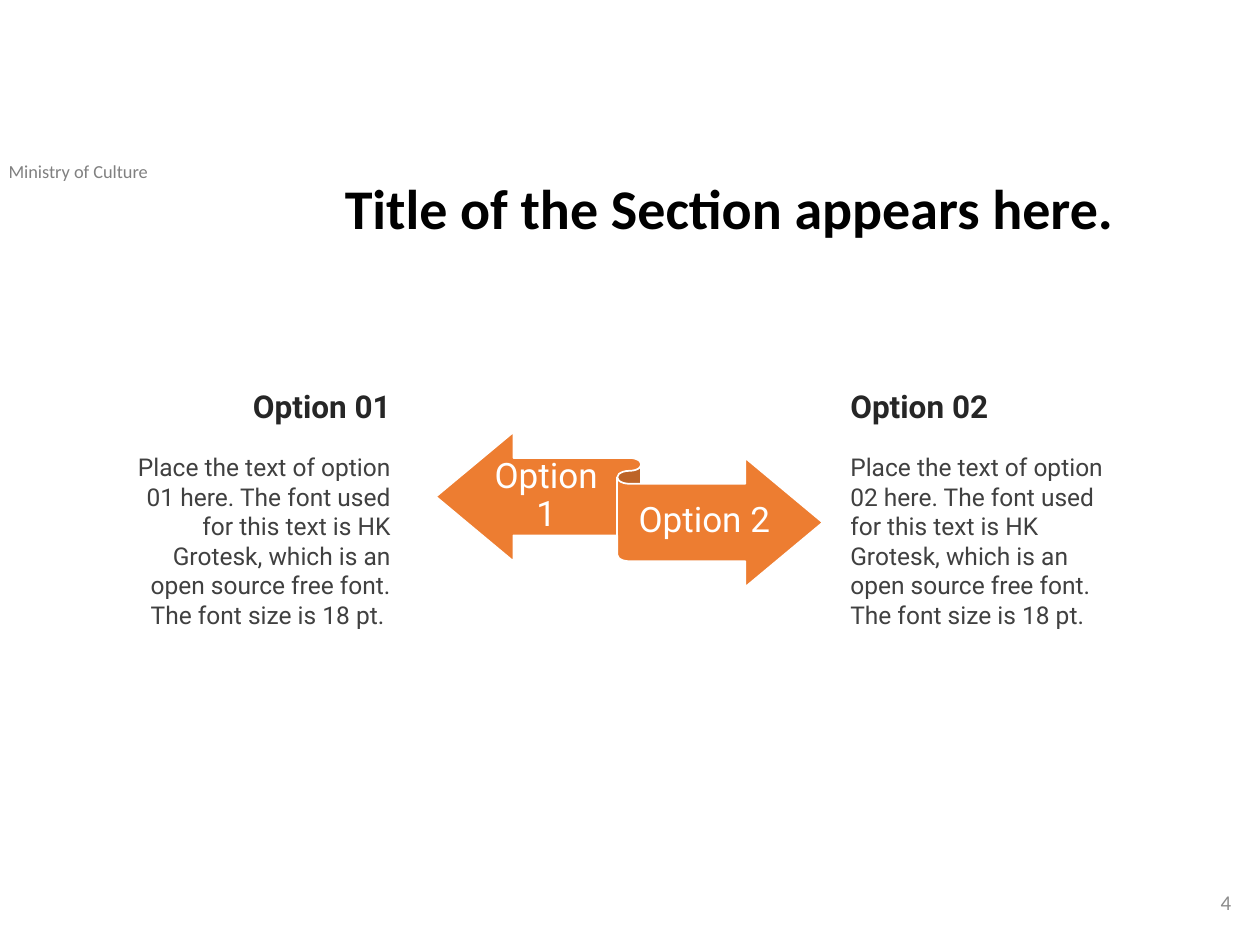
import pptx
import pptx.util
import pptx.dml.color
import pptx.enum.shapes
import pptx.enum.text

Inches = pptx.util.Inches
Pt = pptx.util.Pt
RGBColor = pptx.dml.color.RGBColor
ALIGN = pptx.enum.text.PP_ALIGN
ANCHOR = pptx.enum.text.MSO_ANCHOR

ORANGE = RGBColor(0xED, 0x7D, 0x31)
WHITE = RGBColor(0xFF, 0xFF, 0xFF)
BLACK = RGBColor(0x00, 0x00, 0x00)
HEADING = RGBColor(0x26, 0x26, 0x26)
BODY = RGBColor(0x40, 0x40, 0x40)
HEADER_GRAY = RGBColor(0x80, 0x80, 0x80)
NUMBER_GRAY = RGBColor(0x8C, 0x8C, 0x8C)


def add_frame(slide, left, top, width, height, anchor=ANCHOR.TOP):
    box = slide.shapes.add_textbox(
        Inches(left), Inches(top), Inches(width), Inches(height))
    frame = box.text_frame
    frame.word_wrap = True
    frame.vertical_anchor = anchor
    return frame


def style(paragraph, text, font, size, color, align=ALIGN.LEFT, bold=False):
    paragraph.text = text
    paragraph.alignment = align
    paragraph.font.name = font
    paragraph.font.size = Pt(size)
    paragraph.font.color.rgb = color
    paragraph.font.bold = bold


def add_ribbon(slide):
    ribbon = slide.shapes.add_shape(
        pptx.enum.shapes.MSO_SHAPE.LEFT_RIGHT_RIBBON,
        Inches(3.46), Inches(3.43), Inches(3.07), Inches(1.23))
    ribbon.shadow.inherit = False
    ribbon.fill.solid()
    ribbon.fill.fore_color.rgb = ORANGE
    ribbon.line.color.rgb = WHITE
    ribbon.line.width = Pt(1)


def add_ribbon_label(slide, text, left, top, width):
    frame = add_frame(slide, left, top, width, 0.6, ANCHOR.MIDDLE)
    frame.margin_left = frame.margin_right = 0
    frame.margin_top = frame.margin_bottom = Inches(0.08)
    label = frame.paragraphs[0]
    style(label, text, "Roboto", 20, WHITE, ALIGN.CENTER)
    label.line_spacing = 0.9


def add_option(slide, number, left, width, align, ending):
    frame = add_frame(slide, left, 3.02, width, 2.27)
    style(frame.paragraphs[0], f"Option {number}", "Roboto", 18, HEADING,
          align, bold=True)
    description = frame.add_paragraph()
    style(description,
          f"Place the text of option {number} here. The font used for this "
          "text is HK Grotesk, which is an open source free font. "
          f"The font size is 18 pt.{ending}",
          "Roboto", 14, BODY, align)
    description.space_before = Pt(16)


def main():
    deck = pptx.Presentation()
    deck.slide_width = Inches(10)
    deck.slide_height = Inches(7.5)
    slide = deck.slides.add_slide(deck.slide_layouts[6])

    # Running header
    header = add_frame(slide, -0.03, 1.22, 2.18, 0.28)
    style(header.paragraphs[0], "Ministry of Culture", "Calibri", 10.5,
          HEADER_GRAY)

    # Two-way ribbon with its labels
    add_ribbon(slide)
    add_ribbon_label(slide, "Option 1", 3.83, 3.64, 1.01)
    add_ribbon_label(slide, "Option 2", 4.99, 3.84, 1.2)

    # Option descriptions on either side
    add_option(slide, "01", 0.92, 2.28, ALIGN.RIGHT, " ")
    add_option(slide, "02", 6.65, 2.21, ALIGN.LEFT, "")

    # Slide number
    number = add_frame(slide, 7.62, 6.96, 2.25, 0.4, ANCHOR.MIDDLE)
    style(number.paragraphs[0], "4", "Calibri", 12, NUMBER_GRAY, ALIGN.RIGHT)

    # Section title
    title = add_frame(slide, 2.56, 1.39, 6.46, 0.79).paragraphs[0]
    style(title, "Title of the Section appears here.", "Calibri", 32, BLACK,
          ALIGN.CENTER, bold=True)
    title.line_spacing = 0.9

    deck.save("out.pptx")


if __name__ == "__main__":
    main()
